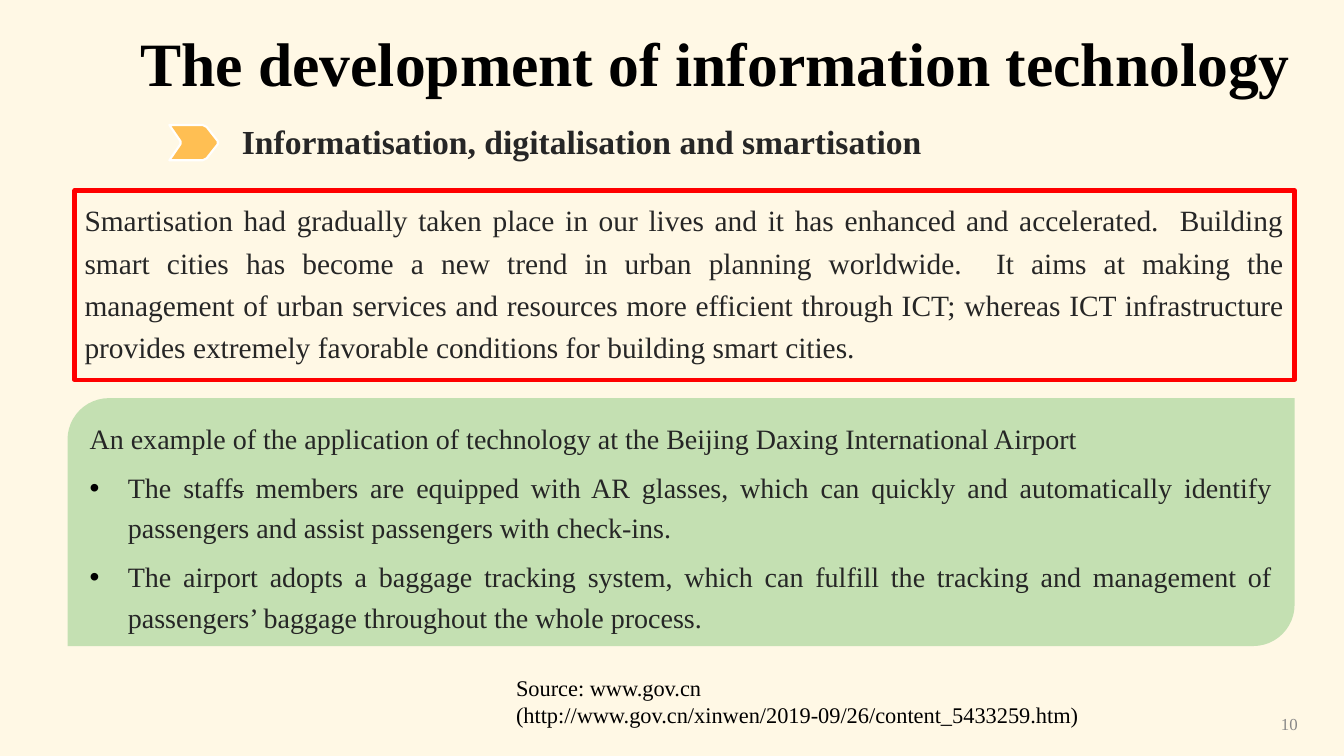
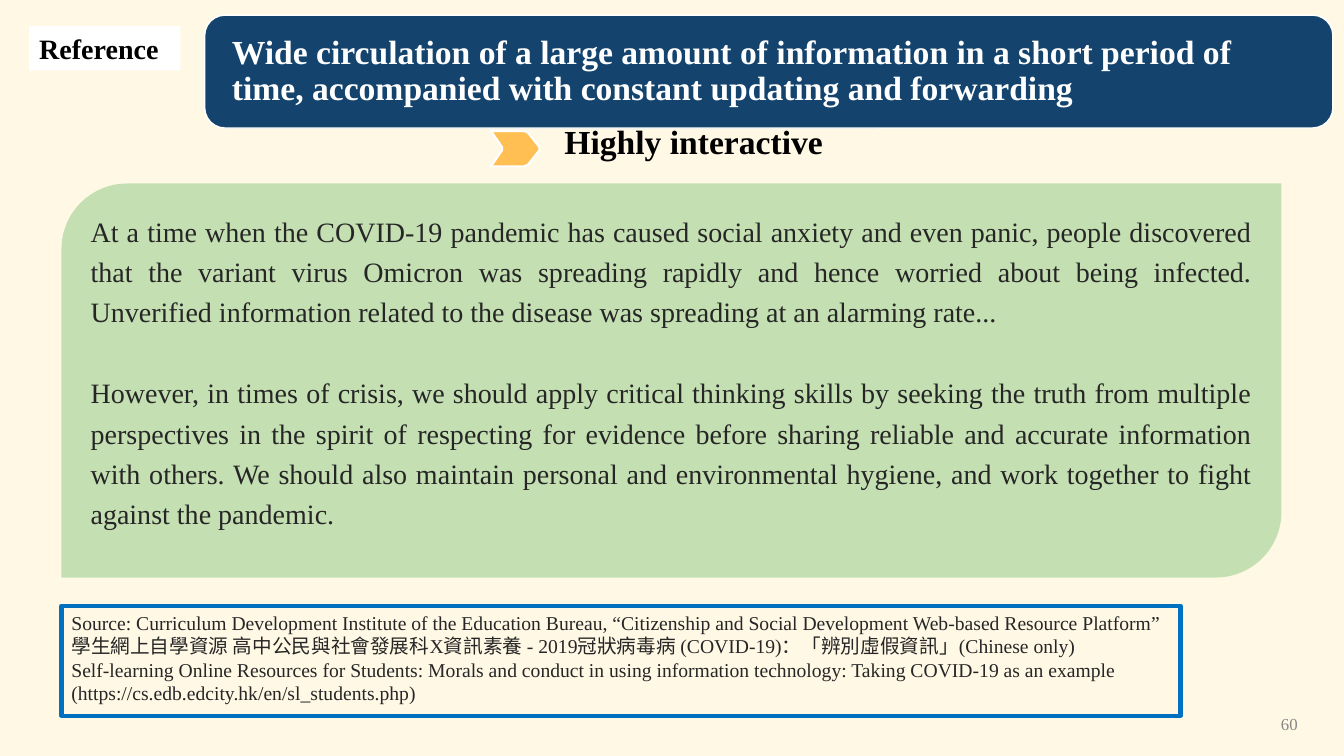
import pptx
import pptx.dml.color
import pptx.enum.shapes
import pptx.enum.text
import pptx.util
import lxml.etree

SHAPE = pptx.enum.shapes.MSO_SHAPE
ALIGN = pptx.enum.text.PP_ALIGN
ANCHOR = pptx.enum.text.MSO_ANCHOR
Inches, Pt = pptx.util.Inches, pptx.util.Pt

WIDTH, HEIGHT = 13.33, 7.5
FONT = "Times New Roman"
PAGE, INK, BLACK, WHITE = "FFF8E5", "262626", "000000", "FFFFFF"
GREEN, ORANGE, NAVY, GREY = "C4E0B2", "FFBF53", "14446E", "888888"
RED, BLUE = "FF0000", "0070C0"

HEADING = {"size": 24, "bold": True}
BODY = {"size": 20, "color": INK}
JUSTIFIED = {"alignment": ALIGN.JUSTIFY, "line_spacing": 1.2}
TIGHT = {"line_spacing": 0.9}
MIDDLE = {"vertical_anchor": ANCHOR.MIDDLE}

# Outline of the marker arrow, in hundredths of an inch
MARKER = [(0, 0), (33, 0), (37, 2), (48, 16), (48, 19), (37, 33),
          (33, 35), (0, 35), (11, 19), (11, 16)]

# A paragraph is a string, or a tuple of runs in which every second run is struck out
TECHNOLOGY = {
    "number": "10",
    "title": "The development of information technology",
    "heading": "Informatisation, digitalisation and smartisation",
    "summary": [
        "Smartisation had gradually taken place in our lives and it has enhanced and "
        "accelerated.  Building smart cities has become a new trend in urban planning "
        "worldwide.  It aims at making the management of urban services and resources "
        "more efficient through ICT; whereas ICT infrastructure provides extremely "
        "favorable conditions for building smart cities."],
    "example": [
        "An example of the application of technology at the Beijing Daxing "
        "International Airport",
        ("The staff", "s", " members are equipped with AR glasses, which can quickly and "
         "automatically identify passengers and assist passengers with check-ins."),
        "The airport adopts a baggage tracking system, which can fulfill the tracking and "
        "management of passengers’ baggage throughout the whole process."],
    "source": ["Source: www.gov.cn",
               "(http://www.gov.cn/xinwen/2019-09/26/content_5433259.htm)"],
}
CIRCULATION = {
    "number": "60",
    "label": "Reference",
    "title": "Wide circulation of a large amount of information in a short period of time, "
             "accompanied with constant updating and forwarding",
    "heading": "Highly interactive",
    "example": [
        "At a time when the COVID-19 pandemic has caused social anxiety and even panic, "
        "people discovered that the variant virus Omicron was spreading rapidly and hence "
        "worried about being infected. Unverified information related to the disease was "
        "spreading at an alarming rate...",
        "However, in times of crisis, we should apply critical thinking skills by seeking "
        "the truth from multiple perspectives in the spirit of respecting for evidence "
        "before sharing reliable and accurate information with others. We should also "
        "maintain personal and environmental hygiene, and work together to fight against "
        "the pandemic."],
    "source": [
        "Source: Curriculum Development Institute of the Education Bureau, “Citizenship and "
        "Social Development Web-based Resource Platform”",
        "學生網上自學資源 高中公民與社會發展科X資訊素養 - 2019冠狀病毒病 (COVID-19)：「辨別虛假資訊」"
        "(Chinese only)",
        "Self-learning Online Resources for Students: Morals and conduct in using "
        "information technology: Taking COVID-19 as an example",
        "(https://cs.edb.edcity.hk/en/sl_students.php)"],
}


def rgb(value):
    return pptx.dml.color.RGBColor.from_string(value)


def apply(target, values):
    for name, value in values.items():
        setattr(target, name, value)


def paint(shape, fill=None, line=None, weight=1):
    shape.shadow.inherit = False
    if fill:
        shape.fill.solid()
        shape.fill.fore_color.rgb = rgb(fill)
    else:
        shape.fill.background()
    if line:
        shape.line.color.rgb = rgb(line)
        shape.line.width = Pt(weight)
    else:
        shape.line.fill.background()


def add_bullet(paragraph):
    properties = paragraph._p.get_or_add_pPr()
    apply_indent = {"marL": Inches(0.38), "indent": -Inches(0.38)}
    for name, value in apply_indent.items():
        properties.set(name, str(value))
    namespace = properties.nsmap["a"]
    color = lxml.etree.SubElement(properties, f"{{{namespace}}}buClr")
    lxml.etree.SubElement(color, f"{{{namespace}}}srgbClr", val=BLACK)
    lxml.etree.SubElement(properties, f"{{{namespace}}}buFont", typeface="Arial")
    lxml.etree.SubElement(properties, f"{{{namespace}}}buChar", char="•")


def write(shape, paragraphs, font, layout=None, frame=None, gap=0, bullets=False):
    """Fill a shape with text; bullets mark every paragraph after the first."""
    text_frame = shape.text_frame
    apply(text_frame, {"word_wrap": True, "auto_size": pptx.enum.text.MSO_AUTO_SIZE.NONE,
                       "vertical_anchor": ANCHOR.TOP, **(frame or {})})
    for index, content in enumerate(paragraphs):
        paragraph = text_frame.add_paragraph() if index else text_frame.paragraphs[0]
        if bullets and index:
            add_bullet(paragraph)
        apply(paragraph, {"alignment": ALIGN.LEFT, "space_before": Pt(gap if index else 0),
                          **(layout or {})})
        runs = (content,) if isinstance(content, str) else content
        for position, text in enumerate(runs):
            run = paragraph.add_run()
            run.text = text
            apply(run.font, {"name": FONT, "size": Pt(font["size"]),
                             "bold": font.get("bold", False)})
            run.font.color.rgb = rgb(font.get("color", BLACK))
            if position % 2:
                run.font._element.set("strike", "sngStrike")


def add_box(slide, place, kind=SHAPE.RECTANGLE, **colors):
    shape = slide.shapes.add_shape(kind, *map(Inches, place))
    paint(shape, **colors)
    return shape


def add_text(slide, place, *content, **formats):
    write(slide.shapes.add_textbox(*map(Inches, place)), *content, **formats)


def add_marker(slide, left, top):
    builder = slide.shapes.build_freeform(*MARKER[0], scale=Inches(0.01))
    builder.add_line_segments(MARKER[1:], close=True)
    paint(builder.convert_to_shape(Inches(left), Inches(top)), ORANGE, WHITE, 1.5)


def add_example(slide, place, paragraphs, **formats):
    panel = add_box(slide, place, SHAPE.ROUND_2_DIAG_RECTANGLE, fill=GREEN)
    write(panel, paragraphs, BODY, JUSTIFIED, **formats)


def start_slide(presentation, content, title_place, title_font, layout, frame):
    slide = presentation.slides.add_slide(presentation.slide_layouts[5])
    title = slide.shapes.title
    apply(title, dict(zip(("left", "top", "width", "height"), map(Inches, title_place))))
    write(title, [content["title"]], title_font, {**TIGHT, **layout}, {**MIDDLE, **frame})
    add_text(slide, (WIDTH - 3.36, 6.98, 3, 0.4), [content["number"]],
             {"size": 12, "color": GREY}, {"alignment": ALIGN.RIGHT}, MIDDLE)
    return slide


def build_technology(presentation):
    content = TECHNOLOGY
    slide = start_slide(presentation, content, (1.06, 0.28, 12.08, 0.77),
                        {"size": 44, "bold": True}, {"alignment": ALIGN.CENTER}, {})
    add_marker(slide, 1.68, 1.24)
    add_text(slide, (2.3, 1.19, 9.76, 0.46), [content["heading"]],
             {**HEADING, "color": INK}, TIGHT, MIDDLE)
    summary = add_box(slide, (0.74, 1.89, 12.1, 1.88), line=RED, weight=3)
    write(summary, content["summary"], {**BODY, "size": 21}, JUSTIFIED)
    add_example(slide, (0.67, 3.95, 12.17, 2.46), content["example"], gap=6, bullets=True)
    add_text(slide, (5.02, 6.64, 5.86, 0.64), content["source"], {"size": 16})


def build_circulation(presentation):
    content = CIRCULATION
    banner_place = (2.03, 0.15, 11.19, 1.12)
    margins = {"margin_left": Inches(0.27), "margin_right": Inches(0.27),
               "margin_top": Inches(0.03), "margin_bottom": Inches(0.03)}
    slide = start_slide(presentation, content, banner_place, {**HEADING, "color": WHITE},
                        {}, margins)
    banner = add_box(slide, banner_place, SHAPE.ROUNDED_RECTANGLE, fill=NAVY, line=WHITE)
    banner.adjustments[0] = 0.18
    slide.shapes.title._element.addprevious(banner._element)
    label = add_box(slide, (0.29, 0.26, 1.5, 0.44), fill=WHITE)
    write(label, [content["label"]], {"size": 20, "bold": True})
    add_marker(slide, 4.87, 1.3)
    add_text(slide, (5.5, 1.15, 3.73, 0.5), [content["heading"]], HEADING)
    add_example(slide, (0.61, 1.82, 12.1, 3.91), content["example"], gap=29)
    source = add_box(slide, (0.61, 6.01, 11.1, 1.09), line=BLUE, weight=3)
    write(source, content["source"], {**BODY, "size": 14}, {"alignment": ALIGN.JUSTIFY})


def main():
    presentation = pptx.Presentation()
    apply(presentation, {"slide_width": Inches(WIDTH), "slide_height": Inches(HEIGHT)})
    background = presentation.slide_master.background.fill
    background.solid()
    background.fore_color.rgb = rgb(PAGE)
    build_technology(presentation)
    build_circulation(presentation)
    presentation.save("out.pptx")


if __name__ == "__main__":
    main()
